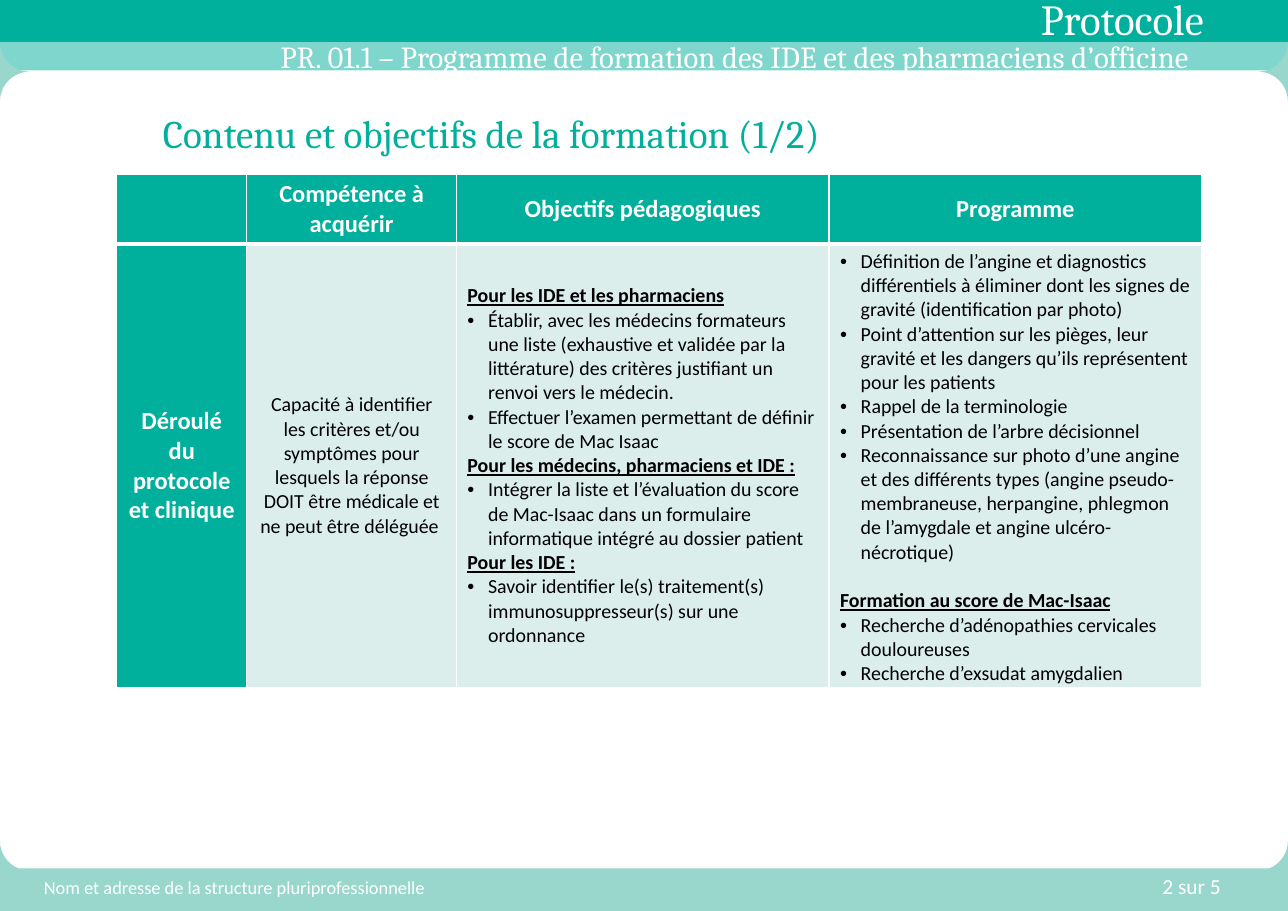
from dataclasses import dataclass

from lxml.etree import SubElement
from pptx import Presentation
from pptx.dml.color import RGBColor
from pptx.enum.shapes import MSO_SHAPE as Form
from pptx.enum.text import MSO_ANCHOR as Anchor, PP_ALIGN as Align
from pptx.oxml.ns import qn
from pptx.util import Pt

TEAL = RGBColor(0x00, 0xAF, 0x9C)
MINT = RGBColor(0x99, 0xD7, 0xCD)
PALE = RGBColor(0xDB, 0xEE, 0xEB)
WHITE = RGBColor(0xFF, 0xFF, 0xFF)
BLACK = RGBColor(0x00, 0x00, 0x00)
WIDE, HIGH = 841.68, 595.44


@dataclass
class Block:
    form: Form
    box: tuple
    fill: RGBColor
    alpha: int = 100


@dataclass
class Label:
    text: str
    box: tuple
    face: str
    size: float
    color: RGBColor = WHITE
    align: Align = Align.LEFT
    anchor: Anchor = Anchor.TOP
    lead: float = 1.0
    indent: float = 0


@dataclass
class Line:
    text: str
    kind: str = "bullet"
    gap: float = 0


@dataclass
class Cell:
    lines: list
    fill: RGBColor = TEAL


def head(text: str, gap: float = 0) -> Line:
    return Line(text, "head", gap)


def title(text: str) -> Cell:
    return Cell([Line(text, "title")])


# Font and paragraph formats of the table lines
FONTS = {
    "title": {"size": Pt(16), "bold": True},
    "plain": {"size": Pt(13), "bold": False},
    "head": {"size": Pt(13), "bold": True, "underline": True},
    "bullet": {"size": Pt(13), "bold": False},
}
CENTRED = ("title", "plain")

# Frame of the page: bands, then the rounded corners
BLOCKS = [
    Block(Form.RECTANGLE, (0, 24.5, WIDE, 21.6), TEAL, 50),
    Block(Form.RECTANGLE, (0, 0, WIDE, 27.4), TEAL),
    Block(Form.RECTANGLE, (0, 567.6, WIDE, 27.84), MINT),
] + [
    Block(Form.PLAQUE, (x, y, 84.2, 38.9), MINT)
    for y in (27.4, 549.6) for x in (-64.8, 822.2)
]

LABELS = [
    Label("Protocole", (673.2, -8.6, 136, 41), "Cambria", 28),
    Label("Contenu et objectifs de la formation (1/2)", (57.6, 71.3, 725.8, 40),
          "Cambria", 25.5, TEAL, lead=0.9, indent=41.8),
    Label("2 sur 5", (620.6, 571, 184.4, 15.8), "Calibri", 14,
          align=Align.RIGHT, anchor=Anchor.MIDDLE),
    Label("PR. 01.1 – Programme de formation des IDE et des pharmaciens d’officine",
          (84.2, 26.6, 699.9, 23), "Cambria", 20,
          align=Align.RIGHT, anchor=Anchor.MIDDLE, lead=0.9),
    Label("Nom et adresse de la structure pluriprofessionnelle",
          (21.6, 571, 270, 25), "Calibri", 12, lead=0.9),
]

COLS = (85, 137, 243.5, 243.5)
ROWS = (45.5, 290)
GRID = [
    [Cell([]), title("Compétence à acquérir"),
     title("Objectifs pédagogiques"), title("Programme")],
    [title("Déroulé du protocole et clinique"),
     Cell([Line("Capacité à identifier les critères et/ou symptômes pour lesquels "
                "la réponse DOIT être médicale et ne peut être déléguée ", "plain")], PALE),
     Cell([
         head("Pour les IDE et les pharmaciens"),
         Line("Établir, avec les médecins formateurs une liste (exhaustive et validée "
              "par la littérature) des critères justifiant un renvoi vers le médecin."),
         Line("Effectuer l’examen permettant de définir le score de Mac Isaac"),
         head("Pour les médecins, pharmaciens et IDE :"),
         Line("Intégrer la liste et l’évaluation du score de Mac-Isaac dans un "
              "formulaire informatique intégré au dossier patient"),
         head("Pour les IDE :"),
         Line("Savoir identifier le(s) traitement(s) immunosuppresseur(s) "
              "sur une ordonnance"),
     ], PALE),
     Cell([
         Line("Définition de l’angine et diagnostics différentiels à éliminer dont "
              "les signes de gravité (identification par photo)"),
         Line("Point d’attention sur les pièges, leur gravité et les dangers "
              "qu’ils représentent pour les patients"),
         Line("Rappel de la terminologie"),
         Line("Présentation de l’arbre décisionnel"),
         Line("Reconnaissance sur photo d’une angine et des différents types (angine "
              "pseudo-membraneuse, herpangine, phlegmon de l’amygdale et angine "
              "ulcéro-nécrotique)"),
         head("Formation au score de Mac-Isaac", 16),
         Line("Recherche d’adénopathies cervicales douloureuses"),
         Line("Recherche d’exsudat amygdalien"),
     ], PALE)],
]


def add_block(slide, block: Block) -> None:
    shape = slide.shapes.add_shape(block.form, *map(Pt, block.box))
    shape.shadow.inherit = False
    shape.line.fill.background()
    shape.fill.solid()
    shape.fill.fore_color.rgb = block.fill
    if block.form == Form.PLAQUE:
        shape.adjustments[0] = 0.5
    if block.alpha < 100:
        tint = shape.fill._xPr.find(".//" + qn("a:srgbClr"))
        SubElement(tint, qn("a:alpha"), val=str(block.alpha * 1000))


def add_label(slide, label: Label) -> None:
    frame = slide.shapes.add_textbox(*map(Pt, label.box)).text_frame
    frame.word_wrap = True
    frame.vertical_anchor = label.anchor
    para = frame.paragraphs[0]
    para.alignment = label.align
    para.line_spacing = label.lead
    if label.indent:
        para._p.get_or_add_pPr().set("marL", str(Pt(label.indent)))
    run = para.add_run()
    run.text = label.text
    formats = {"name": label.face, "size": Pt(label.size)}
    for key, value in formats.items():
        setattr(run.font, key, value)
    run.font.color.rgb = label.color


def add_line(para, line: Line) -> None:
    para.alignment = Align.CENTER if line.kind in CENTRED else Align.LEFT
    para.space_before = Pt(line.gap)
    if line.kind == "bullet":
        props = para._p.get_or_add_pPr()
        props.set("marL", str(Pt(13.5)))
        props.set("indent", str(-Pt(13.5)))
        SubElement(props, qn("a:buFont"), typeface="Arial")
        SubElement(props, qn("a:buChar"), char="•")
    run = para.add_run()
    run.text = line.text
    run.font.name = "Calibri"
    for key, value in FONTS[line.kind].items():
        setattr(run.font, key, value)
    run.font.color.rgb = WHITE if line.kind == "title" else BLACK


def add_edges(cell, widths: dict) -> None:
    props = cell._tc.get_or_add_tcPr()
    for side, width in widths.items():
        edge = SubElement(props, qn("a:ln" + side), w=str(Pt(width)))
        SubElement(SubElement(edge, qn("a:solidFill")), qn("a:srgbClr"), val=str(WHITE))


def fill_cell(cell, item: Cell, row: int) -> None:
    add_edges(cell, {"L": 1, "R": 1, "T": 3 if row else 1, "B": 1 if row else 3})
    cell.fill.solid()
    cell.fill.fore_color.rgb = item.fill
    cell.vertical_anchor = Anchor.MIDDLE
    frame = cell.text_frame
    for i, line in enumerate(item.lines):
        add_line(frame.add_paragraph() if i else frame.paragraphs[0], line)


def add_grid(slide) -> None:
    size = (76.3, 113.8, sum(COLS), sum(ROWS))
    table = slide.shapes.add_table(len(ROWS), len(COLS), *map(Pt, size)).table
    for col, width in zip(table.columns, COLS):
        col.width = Pt(width)
    for r, items in enumerate(GRID):
        table.rows[r].height = Pt(ROWS[r])
        for c, item in enumerate(items):
            fill_cell(table.cell(r, c), item, r)


def main() -> None:
    deck = Presentation()
    deck.slide_width, deck.slide_height = Pt(WIDE), Pt(HIGH)
    slide = deck.slides.add_slide(deck.slide_layouts[6])
    for block in BLOCKS:
        add_block(slide, block)
    for label in LABELS:
        add_label(slide, label)
    add_grid(slide)
    deck.save("out.pptx")


if __name__ == "__main__":
    main()
